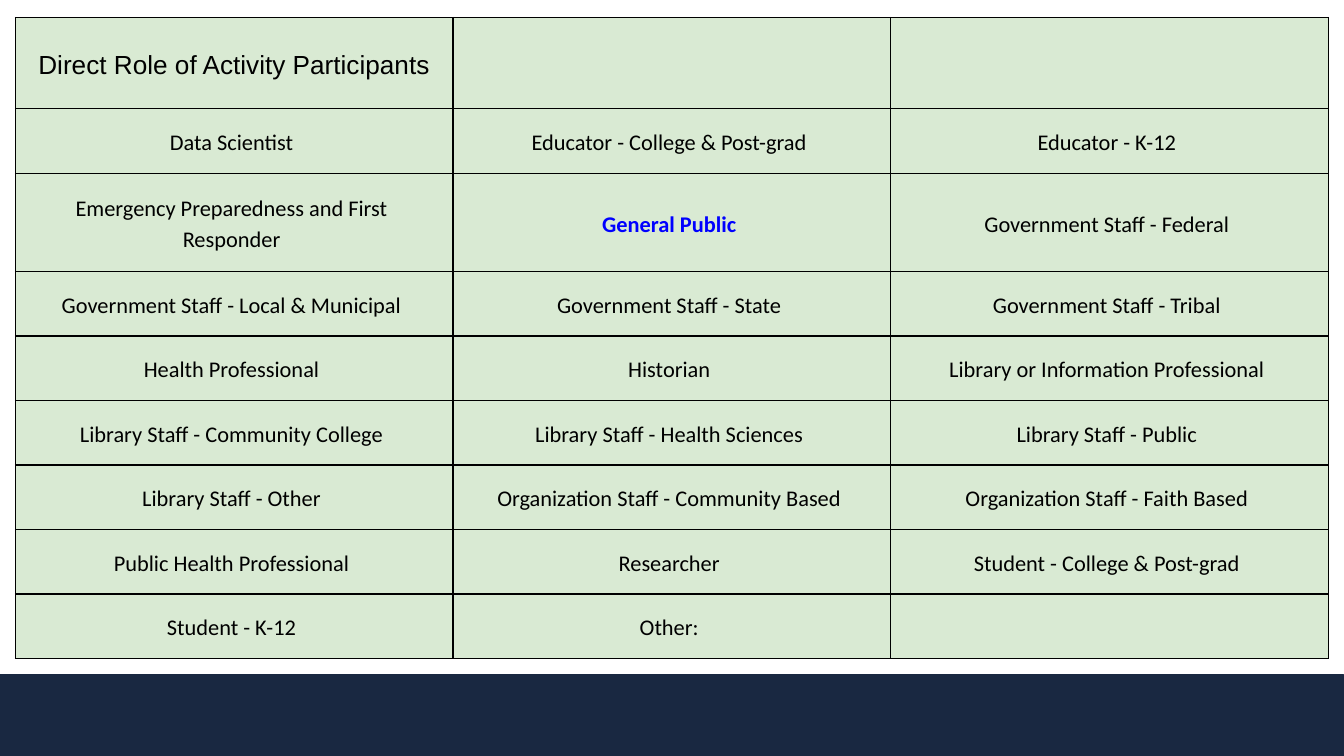
from lxml import etree
from pptx import Presentation
from pptx.dml.color import RGBColor
from pptx.enum.shapes import MSO_SHAPE
from pptx.enum.text import MSO_ANCHOR, PP_ALIGN
from pptx.oxml.ns import qn
from pptx.util import Inches, Pt

RECT = MSO_SHAPE.RECTANGLE
MIDDLE = MSO_ANCHOR.MIDDLE
CENTER = PP_ALIGN.CENTER

WIDTH = 10
HEIGHT = WIDTH * 9 / 16
COLORS = {"navy": "192841", "green": "D9EAD3", "black": "000000", "blue": "0000FF"}
HEAD = {"name": "Arial", "size": Pt(14), "bold": False}
BODY = {"name": "Calibri", "size": Pt(12), "bold": False}
PICKED = {**BODY, "bold": True}
CHOICE = "General Public"
ROLES = [
    ["Direct Role of Activity Participants", "", ""],
    ["Data Scientist", "Educator - College & Post-grad", "Educator - K-12"],
    ["Emergency Preparedness and First Responder", CHOICE, "Government Staff - Federal"],
    ["Government Staff - Local & Municipal", "Government Staff - State", "Government Staff - Tribal"],
    ["Health Professional", "Historian", "Library or Information Professional"],
    ["Library Staff - Community College", "Library Staff - Health Sciences", "Library Staff - Public"],
    ["Library Staff - Other", "Organization Staff - Community Based", "Organization Staff - Faith Based"],
    ["Public Health Professional", "Researcher", "Student - College & Post-grad"],
    ["Student - K-12", "Other:", ""],
]
TALL = {0: 0.68, 2: 0.73}


def tint(name):
    """Return the named colour."""
    return RGBColor.from_string(COLORS[name])


def add_edges(cell):
    """Draw a thin black line on each side of a cell."""
    props = cell._tc.get_or_add_tcPr()
    for spot, side in enumerate(("a:lnL", "a:lnR", "a:lnT", "a:lnB")):
        line = etree.Element(qn(side), w=str(Pt(0.75)))
        fill = etree.SubElement(line, qn("a:solidFill"))
        etree.SubElement(fill, qn("a:srgbClr"), val=COLORS["black"])
        props.insert(spot, line)


def write_cell(cell, text, style, color, right):
    """Put centred, styled text in a cell."""
    for side in ("left", "right", "top", "bottom"):
        setattr(cell, f"margin_{side}", Inches(0.1))
    cell.vertical_anchor = MIDDLE
    para = cell.text_frame.paragraphs[0]
    para.alignment = CENTER
    para.line_spacing = 1.15
    props = para._p.get_or_add_pPr()
    props.set("marL", str(Inches(0.07)))
    props.set("marR", str(Inches(right)))
    run = para.add_run()
    run.text = text
    for key, value in style.items():
        setattr(run.font, key, value)
    run.font.color.rgb = tint(color)


def add_roles(slide, left, top, width):
    """Add the table of roles in equal columns."""
    heights = [TALL.get(row, 0.48) for row in range(len(ROLES))]
    box = (left, top, width, sum(heights))
    table = slide.shapes.add_table(len(ROLES), len(ROLES[0]), *map(Inches, box)).table
    table.first_row = table.horz_banding = False
    for col in table.columns:
        col.width = Inches(width / len(ROLES[0]))
    for row, (height, texts) in enumerate(zip(heights, ROLES)):
        table.rows[row].height = Inches(height)
        for col, text in enumerate(texts):
            cell = table.cell(row, col)
            cell.fill.solid()
            cell.fill.fore_color.rgb = tint("green")
            add_edges(cell)
            if not text:
                continue
            if row == 0:
                write_cell(cell, text, HEAD, "black", 0.07)
            elif text == CHOICE:
                write_cell(cell, text, PICKED, "blue", 0.11)
            else:
                write_cell(cell, text, BODY, "black", 0.11)


def add_footer(slide, left, top, width, height):
    """Add the dark band along the bottom."""
    band = slide.shapes.add_shape(RECT, *map(Inches, (left, top, width, height)))
    band.shadow.inherit = False
    band.fill.solid()
    band.fill.fore_color.rgb = tint("navy")
    band.line.color.rgb = tint("navy")
    band.line.width = Pt(1.5)


def main():
    """Build and save the slide."""
    deck = Presentation()
    deck.slide_width, deck.slide_height = Inches(WIDTH), Inches(HEIGHT)
    slide = deck.slides.add_slide(deck.slide_layouts[6])
    add_footer(slide, 0, HEIGHT - 0.6, WIDTH, 0.6)
    width = 9.77
    add_roles(slide, (WIDTH - width) / 2, 0.13, width)
    deck.save("out.pptx")


if __name__ == "__main__":
    main()
